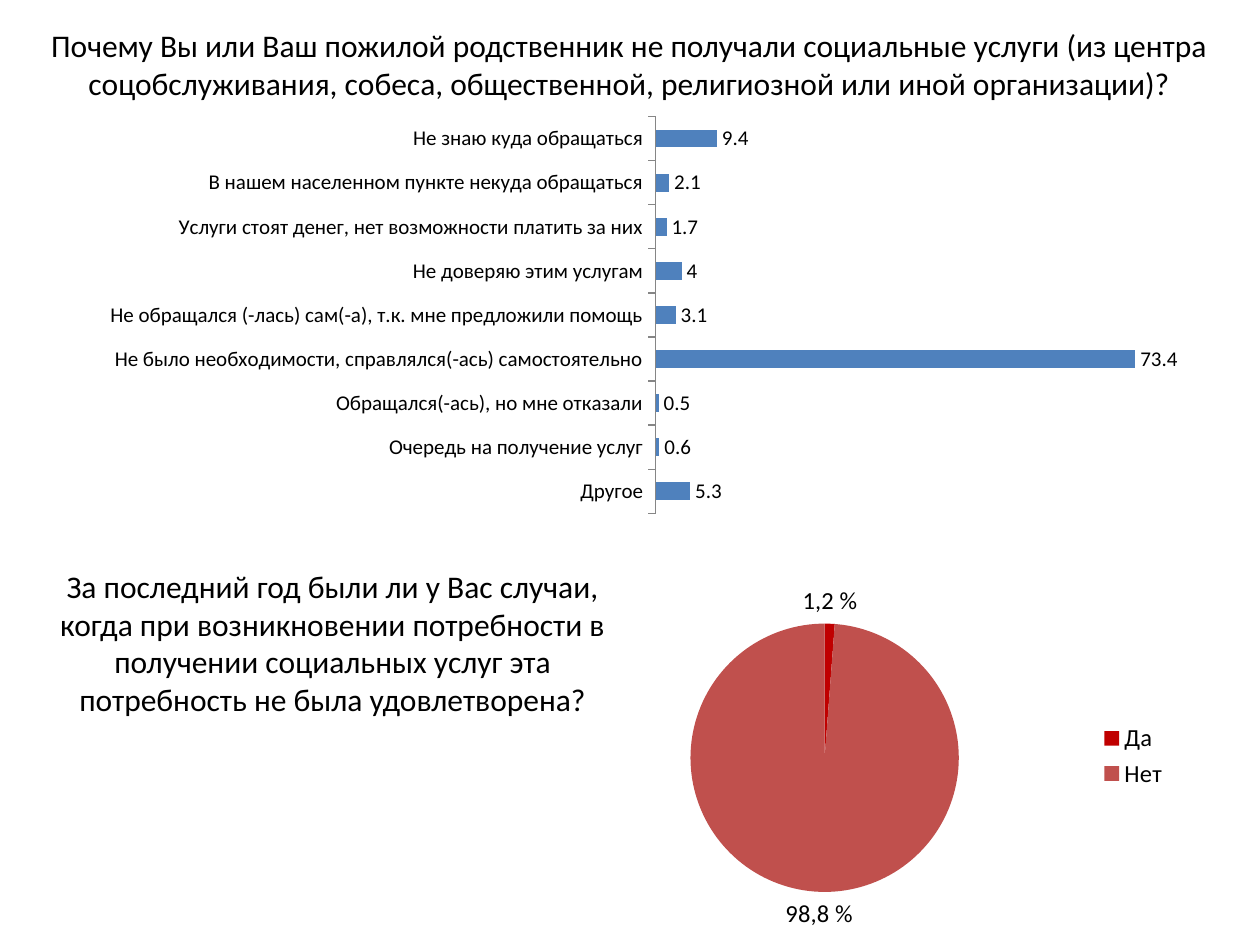
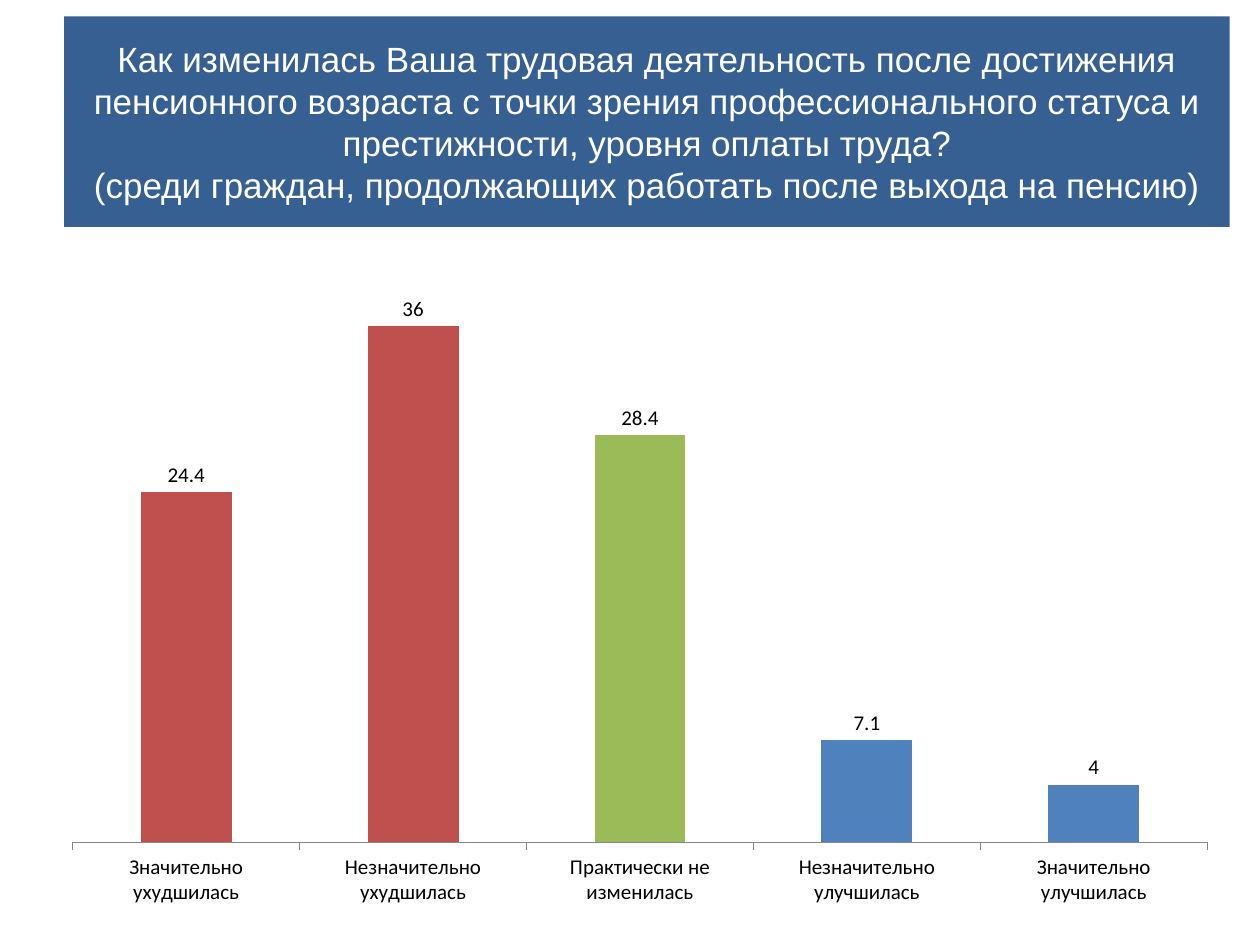
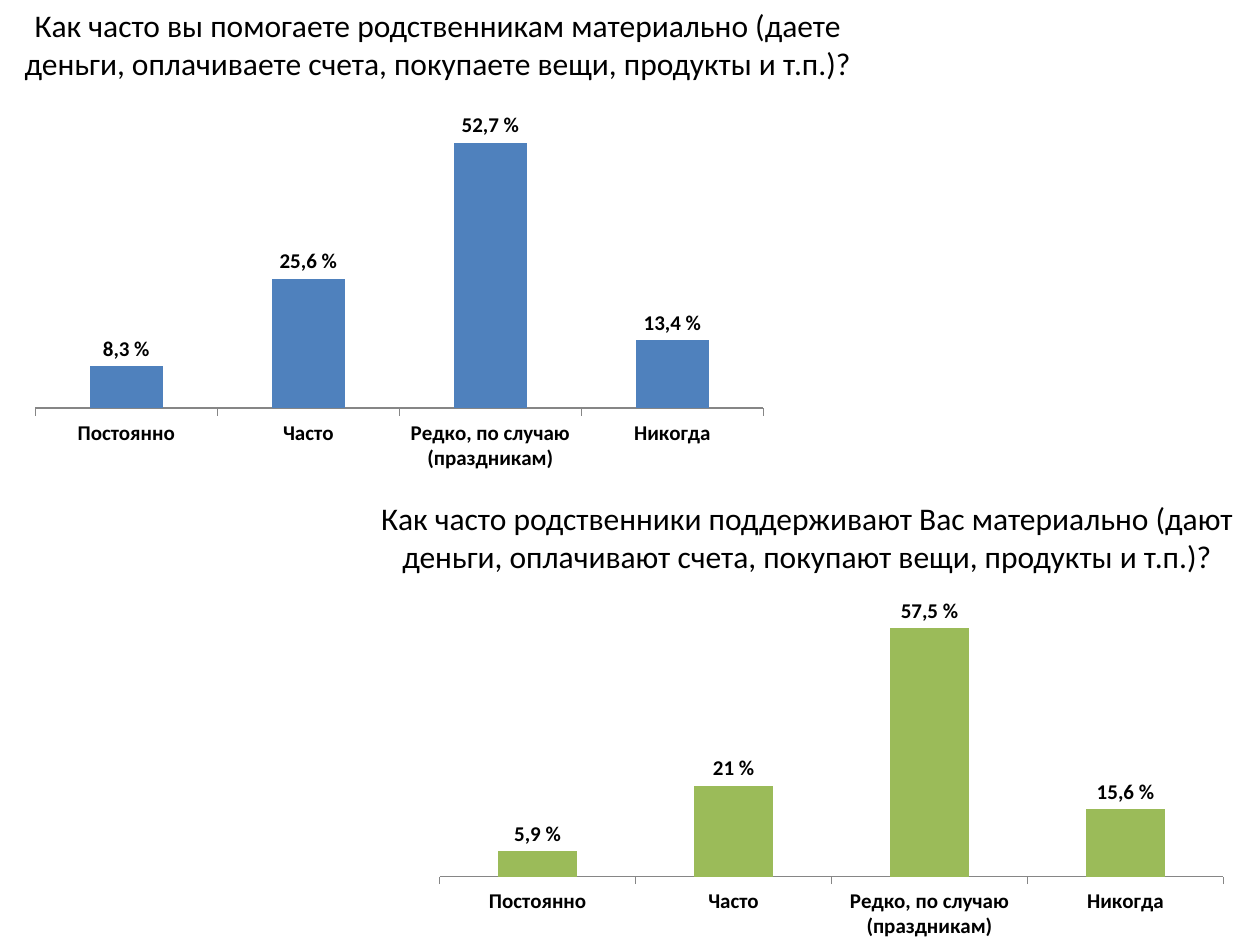
from lxml.etree import SubElement
from pptx import Presentation
from pptx.chart.data import CategoryChartData
from pptx.dml.color import RGBColor
from pptx.enum.chart import XL_CHART_TYPE as Kind
from pptx.enum.chart import XL_LABEL_POSITION as LabelPosition
from pptx.enum.chart import XL_LEGEND_POSITION as LegendPosition
from pptx.enum.chart import XL_TICK_LABEL_POSITION as TickLabels
from pptx.enum.chart import XL_TICK_MARK as TickMark
from pptx.enum.text import MSO_ANCHOR as Anchor
from pptx.enum.text import MSO_AUTO_SIZE as AutoSize
from pptx.enum.text import PP_ALIGN as Align
from pptx.oxml.ns import qn
from pptx.util import Inches, Pt

# Shared style
color = RGBColor.from_string
BLACK, WHITE, GRAY = "000000", "FFFFFF", "868686"
BLUE, RED, GREEN = "4F81BD", "C0504D", "9BBB59"
DARK_BLUE, DARK_RED = "376092", "C00000"
BODY_FONT, BANNER_FONT = "Calibri", "Arial"

deck = Presentation()
deck.slide_width, deck.slide_height = Inches(10), Inches(7.5)
title_only = deck.slide_layouts[5]
pages = [deck.slides.add_slide(title_only) for _ in range(3)]


def grid_box(left, top, width, height):
    """Turn percentages of the slide into a position and a size."""
    column, row = deck.slide_width / 100, deck.slide_height / 100
    return [round(n) for n in (left * column, top * row, width * column, height * row)]


# Questions: page, box in percent, text, whether it is the title, banner fill
questions = [
    (0, (2.3, 2.13, 95.3, 9.47),
     "Почему Вы или Ваш пожилой родственник не получали социальные услуги "
     "(из центра соцобслуживания, собеса, общественной, религиозной или иной организации)?",
     True, None),
    (0, (3.1, 59.33, 46.6, 17.47),
     "За последний год были ли у Вас случаи, когда при возникновении потребности "
     "в получении социальных услуг эта потребность не была удовлетворена?",
     False, None),
    (1, (5.1, 1.73, 92.5, 22.27),
     "Как изменилась Ваша трудовая деятельность после достижения пенсионного возраста "
     "с точки зрения профессионального статуса и престижности, уровня оплаты труда?\n"
     "(среди граждан, продолжающих работать после выхода на пенсию)",
     True, DARK_BLUE),
    (2, (0, 0, 69.5, 9.47),
     "Как часто вы помогаете родственникам материально (даете деньги, "
     "оплачиваете счета, покупаете вещи, продукты и т.п.)?",
     True, None),
    (2, (28.1, 52.13, 71.9, 9.47),
     "Как часто родственники поддерживают Вас материально (дают деньги, "
     "оплачивают счета, покупают вещи, продукты и т.п.)?",
     False, None),
]
for number, place, text, is_title, fill in questions:
    page = pages[number]
    box = page.shapes.title if is_title else page.shapes.add_textbox(0, 0, 0, 0)
    box.left, box.top, box.width, box.height = grid_box(*place)
    frame = box.text_frame
    frame.word_wrap, frame.auto_size = True, AutoSize.NONE
    frame.vertical_anchor = Anchor.MIDDLE if fill else Anchor.TOP
    para = frame.paragraphs[0]
    para.text, para.alignment = text, Align.CENTER
    if fill:
        box.fill.solid()
        box.fill.fore_color.rgb = color(fill)
        para.space_after = Pt(18)
    for span in para.runs:
        span.font.name = BANNER_FONT if fill else BODY_FONT
        span.font.size = Pt(20 if fill else 18)
        span.font.color.rgb = color(WHITE if fill else BLACK)


def add_survey_chart(page, kind, place, plot_area, answers, fills, top_value=None,
                     size=12, bold=False, percent=False):
    """Draw one series with value labels; plot_area holds shares of the chart."""
    data = CategoryChartData()
    data.categories = list(answers)
    data.add_series("Series 1", list(answers.values()))
    chart = page.shapes.add_chart(kind, *grid_box(*place), data).chart
    chart.has_title = chart.has_legend = False
    chart.font.name, chart.font.size = BODY_FONT, Pt(10)
    chart.font.color.rgb = color(BLACK)
    plot, series = chart.plots[0], chart.plots[0].series[0]
    plot.vary_by_categories = kind == Kind.PIE

    # Fixed plot area
    area = chart.element.find(".//" + qn("c:plotArea"))
    layout = area.find(qn("c:layout"))
    if layout is None:
        layout = SubElement(area, qn("c:layout"))
        area.insert(0, layout)
    manual = SubElement(layout, qn("c:manualLayout"))
    settings = [("layoutTarget", "inner"), ("xMode", "edge"), ("yMode", "edge")]
    for tag, value in settings + list(zip("xywh", plot_area)):
        SubElement(manual, qn("c:" + tag)).set("val", str(value))

    # Fills and labels
    labels = series.data_labels
    labels.show_value, labels.position = True, LabelPosition.OUTSIDE_END
    labels.font.size, labels.font.bold = Pt(size), bold
    labels.font.color.rgb = color(BLACK)
    series.format.fill.solid()
    series.format.fill.fore_color.rgb = color(fills[0])
    for index, value in enumerate(answers.values()):
        point = series.points[index]
        if len(fills) > 1:
            point.format.fill.solid()
            point.format.fill.fore_color.rgb = color(fills[index])
        if percent:
            label = point.data_label
            label.text_frame.text = f"{value} %".replace(".", ",")
            label.position = LabelPosition.OUTSIDE_END
            font = label.text_frame.paragraphs[0].runs[0].font
            font.name, font.size, font.bold = BODY_FONT, Pt(size), bold
            font.color.rgb = color(BLACK)

    if kind == Kind.PIE:
        chart.has_legend = True
        chart.legend.position = LegendPosition.RIGHT
        chart.legend.include_in_layout = False
        chart.legend.font.size = Pt(size)
        return

    # Axes
    plot.gap_width = 150
    values, names = chart.value_axis, chart.category_axis
    values.visible = values.has_major_gridlines = False
    values.minimum_scale, values.maximum_scale = 0, top_value
    names.major_tick_mark, names.minor_tick_mark = TickMark.OUTSIDE, TickMark.NONE
    names.tick_label_position = TickLabels.NEXT_TO_AXIS
    names.tick_labels.font.size, names.tick_labels.font.bold = Pt(size), bold
    names.format.line.color.rgb = color(GRAY)


# Slide 1: reasons and unmet needs
unmet_needs = {"Да": 1.2, "Нет": 98.8}
add_survey_chart(pages[0], Kind.PIE, (43.7, 60, 50, 40), (0.22, 0.15, 0.43, 0.71),
                 unmet_needs, [DARK_RED, RED], size=14, percent=True)
reasons = {
    "Другое": 5.3,
    "Очередь на получение услуг": 0.6,
    "Обращался(-ась), но мне отказали": 0.5,
    "Не было необходимости, справлялся(-ась) самостоятельно": 73.4,
    "Не обращался (-лась) сам(-а), т.к. мне предложили помощь": 3.1,
    "Не доверяю этим услугам": 4,
    "Услуги стоят денег, нет возможности платить за них": 1.7,
    "В нашем населенном пункте некуда обращаться": 2.1,
    "Не знаю куда обращаться": 9.4,
}
add_survey_chart(pages[0], Kind.BAR_CLUSTERED, (7, 11.47, 88.3, 43.73),
                 (0.51, 0.02, 0.47, 0.96), reasons, [BLUE], 80)

# Slide 2: change in work after retirement age
work_change = {
    "Значительно ухудшилась": 24.4,
    "Незначительно ухудшилась": 36,
    "Практически не изменилась": 28.4,
    "Незначительно улучшилась": 7.1,
    "Значительно улучшилась": 4,
}
add_survey_chart(pages[1], Kind.COLUMN_CLUSTERED, (3.9, 27.07, 93.8, 69.73),
                 (0.02, 0.02, 0.96, 0.87), work_change, [RED, RED, GREEN, BLUE, BLUE], 40)

# Slide 3: help given and help received
frequencies = ["Постоянно", "Часто", "Редко, по случаю (праздникам)", "Никогда"]
help_charts = [
    ((1.6, 10.4, 60.2, 40), [8.3, 25.6, 52.7, 13.4], BLUE, 60),
    ((33.6, 60, 64.8, 40), [5.9, 21, 57.5, 15.6], GREEN, 70),
]
for place, shares, fill, top_value in help_charts:
    add_survey_chart(pages[2], Kind.COLUMN_CLUSTERED, place, (0.02, 0.02, 0.96, 0.8),
                     dict(zip(frequencies, shares)), [fill], top_value,
                     bold=True, percent=True)

deck.save("out.pptx")
